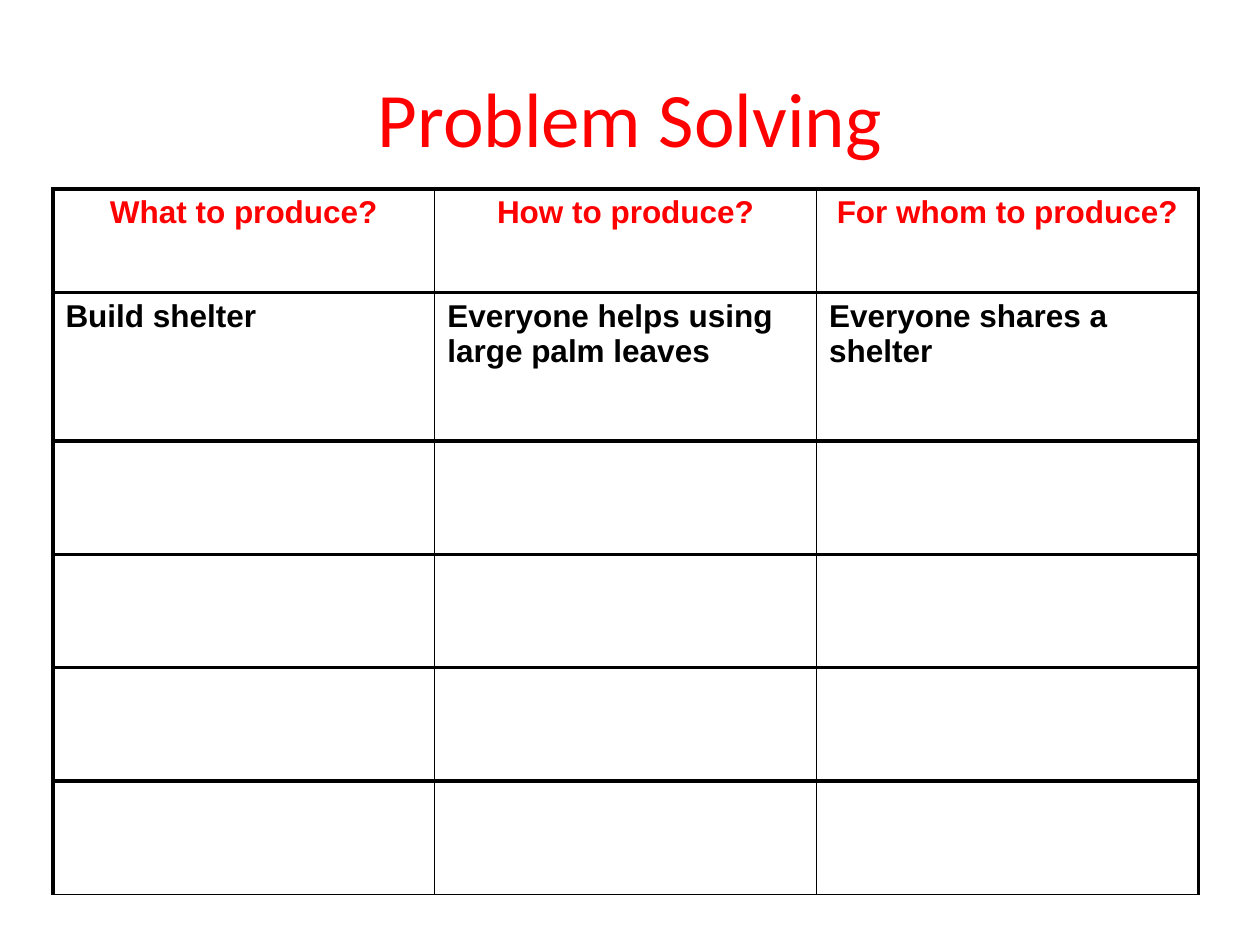
"""Build a Problem Solving slide with a three-question planning table."""
from lxml import etree
from pptx import Presentation
from pptx import util as u
from pptx.dml.color import RGBColor
from pptx.enum import text
from pptx.oxml.ns import qn

RED = RGBColor(255, 0, 0)
BLACK = RGBColor(0, 0, 0)
THICK, THIN = u.Pt(2.25), u.Pt(1)
ROWS = [
    ["What to produce?", "How to produce?", "For whom to produce?"],
    ["Build shelter", "Everyone helps using large palm leaves", "Everyone shares a shelter"],
]
HIGH = [0.82, 1.18] + [0.9] * 4
WIDE = [3.03] * 3


def style(font, form):
    for key, val in form.items():
        if key == "color":
            font.color.rgb = val
        else:
            setattr(font, key, val)


def border(cell, sides):
    props = cell._tc.get_or_add_tcPr()
    for side, width in sides.items():
        line = etree.SubElement(props, qn("a:ln" + side), w=str(width))
        fill = etree.SubElement(line, qn("a:solidFill"))
        etree.SubElement(fill, qn("a:srgbClr"), val=str(BLACK))


deck = Presentation()
deck.slide_width, deck.slide_height = u.Inches(10), u.Inches(7.5)
slide = deck.slides.add_slide(deck.slide_layouts[5])

title = slide.shapes.title
place = {"left": 0.5, "top": 0.3, "width": 9, "height": 1.25}
for key, val in place.items():
    setattr(title, key, u.Inches(val))
title.text_frame.text = "Problem Solving"
title.text_frame.vertical_anchor = text.MSO_ANCHOR.MIDDLE
head = title.text_frame.paragraphs[0]
head.alignment = text.PP_ALIGN.CENTER
style(head.runs[0].font, {"name": "Calibri", "size": u.Pt(44), "color": RED})

frame = slide.shapes.add_table(
    len(HIGH), len(WIDE), u.Inches(0.42), u.Inches(1.5),
    u.Inches(sum(WIDE)), u.Inches(sum(HIGH)))
table = frame.table
table.first_row = table.horz_banding = False
for col, width in zip(table.columns, WIDE):
    col.width = u.Inches(width)
for row, height in zip(table.rows, HIGH):
    row.height = u.Inches(height)

for r in range(len(HIGH)):
    for c in range(len(WIDE)):
        cell = table.cell(r, c)
        border(cell, {
            "L": THICK if c == 0 else THIN,
            "R": THICK if c == len(WIDE) - 1 else THIN,
            "T": THICK,
            "B": THIN if r == len(HIGH) - 1 else THICK,
        })
        cell.fill.background()
        if r < len(ROWS):
            cell.text = ROWS[r][c]
            para = cell.text_frame.paragraphs[0]
            para.alignment = text.PP_ALIGN.LEFT if r else text.PP_ALIGN.CENTER
            style(para.runs[0].font, {
                "name": "Arial", "size": u.Pt(18), "bold": True,
                "color": BLACK if r else RED,
            })

deck.save("out.pptx")
